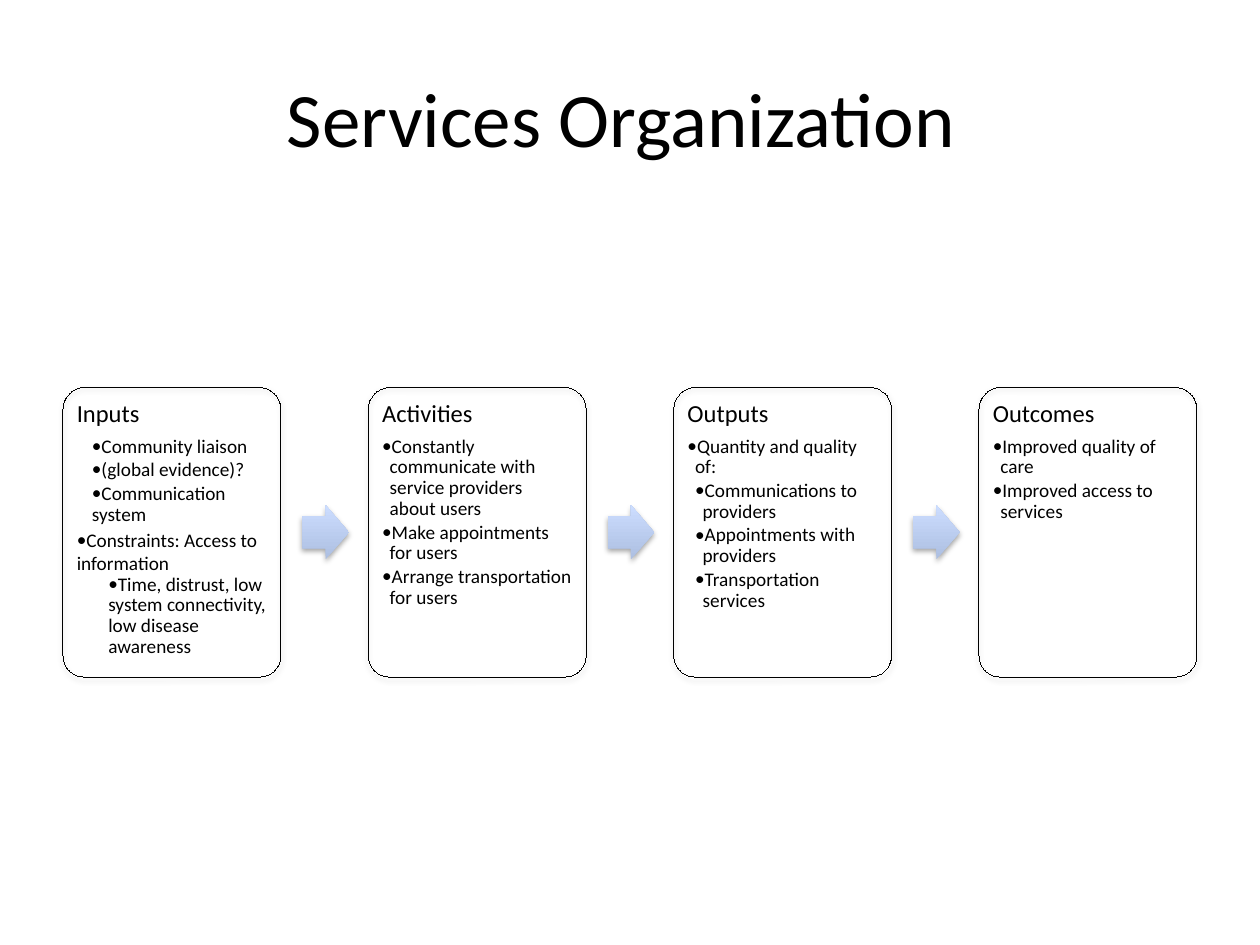
from dataclasses import dataclass
from lxml.etree import SubElement
from pptx import Presentation
from pptx.dml.color import RGBColor
from pptx.enum.shapes import MSO_SHAPE as Preset
from pptx.enum.text import MSO_ANCHOR as Anchor, PP_ALIGN as Align
from pptx.oxml.ns import qn
from pptx.util import Inches, Pt


@dataclass(frozen=True)
class Theme:
    font: str = "Calibri"
    ink: str = "000000"
    arrow_low: str = "ADBFE1"
    arrow_high: str = "CCDDFF"
    title_size: float = 44
    heading_size: float = 14
    item_size: float = 11


@dataclass(frozen=True)
class Item:
    text: str
    level: int = 1
    margin: float = 0.06
    hang: float = -0.06
    spacing: float = 0.9
    after: float = 1.65


@dataclass(frozen=True)
class Flow:
    left: float = 0.5
    span: float = 9
    columns: int = 4
    middle: float = 1.75 + 4.95 / 2
    width: float = 1.73
    height: float = 2.3
    inset: float = 0.05
    padding: float = 0.06
    arrow_offset: float = 1.9
    arrow_width: float = 0.37
    arrow_height: float = 0.43

    def column(self, index):
        return self.left + index * (self.span - self.width) / (self.columns - 1)

    def top(self, height):
        return self.middle - height / 2


class Deck:
    def __init__(self, theme, flow):
        self.theme = theme
        self.flow = flow
        self.presentation = Presentation()
        self.presentation.slide_width = Inches(10)
        self.presentation.slide_height = Inches(7.5)
        self.slide = self.presentation.slides.add_slide(self.presentation.slide_layouts[6])

    def frame(self, left, top, width, height):
        box = self.slide.shapes.add_textbox(*map(Inches, (left, top, width, height)))
        box.text_frame.word_wrap = True
        return box.text_frame

    def style(self, paragraph, size):
        for run in paragraph.runs:
            run.font.name = self.theme.font
            run.font.size = Pt(size)
            run.font.color.rgb = RGBColor.from_string(self.theme.ink)

    def title(self, text):
        heading = self.frame(0.5, 0.3, 9, 1.25)
        heading.text = text
        heading.vertical_anchor = Anchor.MIDDLE
        heading.paragraphs[0].alignment = Align.CENTER
        self.style(heading.paragraphs[0], self.theme.title_size)

    def shadowed(self, preset, left, width, height, adjustments):
        place = (left, self.flow.top(height), width, height)
        shape = self.slide.shapes.add_shape(preset, *map(Inches, place))
        shape.element.remove(shape.element.find(qn("p:style")))
        for index, value in enumerate(adjustments):
            shape.adjustments[index] = value
        shape.shadow.inherit = False
        effects = shape.element.spPr.find(qn("a:effectLst"))
        shadow = SubElement(effects, qn("a:outerShdw"), blurRad=str(Pt(3.1)),
                            dist=str(Pt(1.8)), dir="5400000", rotWithShape="0")
        color = SubElement(shadow, qn("a:srgbClr"), val=self.theme.ink)
        SubElement(color, qn("a:alpha"), val="35000")
        return shape

    def card(self, index, heading, items):
        flow = self.flow
        left = flow.column(index)
        outline = self.shadowed(Preset.ROUNDED_RECTANGLE, left, flow.width, flow.height, [0.1])
        outline.fill.background()
        outline.line.color.rgb = RGBColor.from_string(self.theme.ink)

        height = flow.height - 2 * flow.inset
        body = self.frame(left + flow.inset, flow.top(height),
                          flow.width - 2 * flow.inset, height)
        body.margin_left = body.margin_right = Inches(flow.padding)
        body.margin_top = body.margin_bottom = Inches(flow.padding)
        body.text = heading
        first = body.paragraphs[0]
        first.line_spacing = 0.9
        first.space_after = Pt(4.9)
        self.style(first, self.theme.heading_size)
        for item in items:
            self.bullet(body.add_paragraph(), item)

    def bullet(self, paragraph, item):
        paragraph.text = item.text
        paragraph.level = item.level
        paragraph.line_spacing = item.spacing
        paragraph.space_after = Pt(item.after)
        self.style(paragraph, self.theme.item_size)
        properties = paragraph._p.get_or_add_pPr()
        properties.set("marL", str(Inches(item.margin)))
        properties.set("indent", str(Inches(item.hang)))
        SubElement(properties, qn("a:buFont"), typeface=self.theme.font)
        SubElement(properties, qn("a:buChar"), char="•")

    def arrow(self, index):
        flow = self.flow
        arrow = self.shadowed(Preset.RIGHT_ARROW, flow.column(index) + flow.arrow_offset,
                              flow.arrow_width, flow.arrow_height, [0.6, 0.5])
        arrow.line.fill.background()
        arrow.fill.gradient()
        arrow.fill.gradient_angle = 90
        shades = (self.theme.arrow_low, self.theme.arrow_high)
        for stop, position, shade in zip(arrow.fill.gradient_stops, (0, 1), shades):
            stop.position = position
            stop.color.rgb = RGBColor.from_string(shade)


STAGES = [
    ("Inputs", [
        Item("Community liaison", margin=0.12, hang=0),
        Item("(global evidence)?", margin=0.12, hang=0),
        Item("Communication system", margin=0.12, hang=0),
        Item("Constraints: Access to information", 2, 0, 0, 1, 0),
        Item("Time, distrust, low system connectivity, low disease awareness", 2, 0.25, 0),
    ]),
    ("Activities", [
        Item("Constantly communicate with service providers about users"),
        Item("Make appointments for users"),
        Item("Arrange transportation for users"),
    ]),
    ("Outputs", [
        Item("Quantity and quality of:"),
        Item("Communications to providers", 2, 0.12),
        Item("Appointments with providers", 2, 0.12),
        Item("Transportation services", 2, 0.12),
    ]),
    ("Outcomes", [
        Item("Improved quality of care"),
        Item("Improved access to services"),
    ]),
]


def main():
    deck = Deck(Theme(), Flow())
    deck.title("Services Organization ")
    for index, (heading, items) in enumerate(STAGES):
        if index:
            deck.arrow(index - 1)
        deck.card(index, heading, items)
    deck.presentation.save("out.pptx")


if __name__ == "__main__":
    main()
